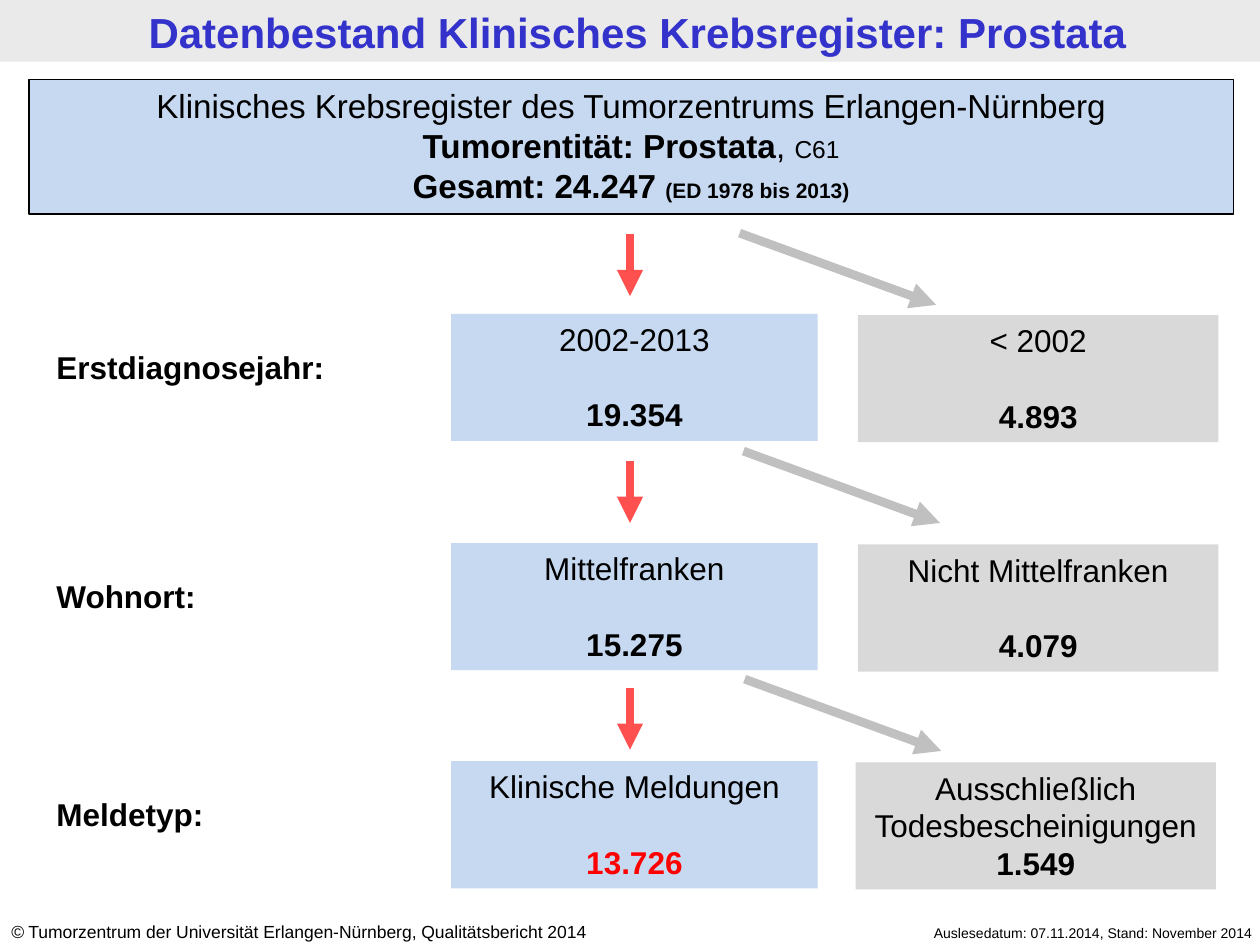
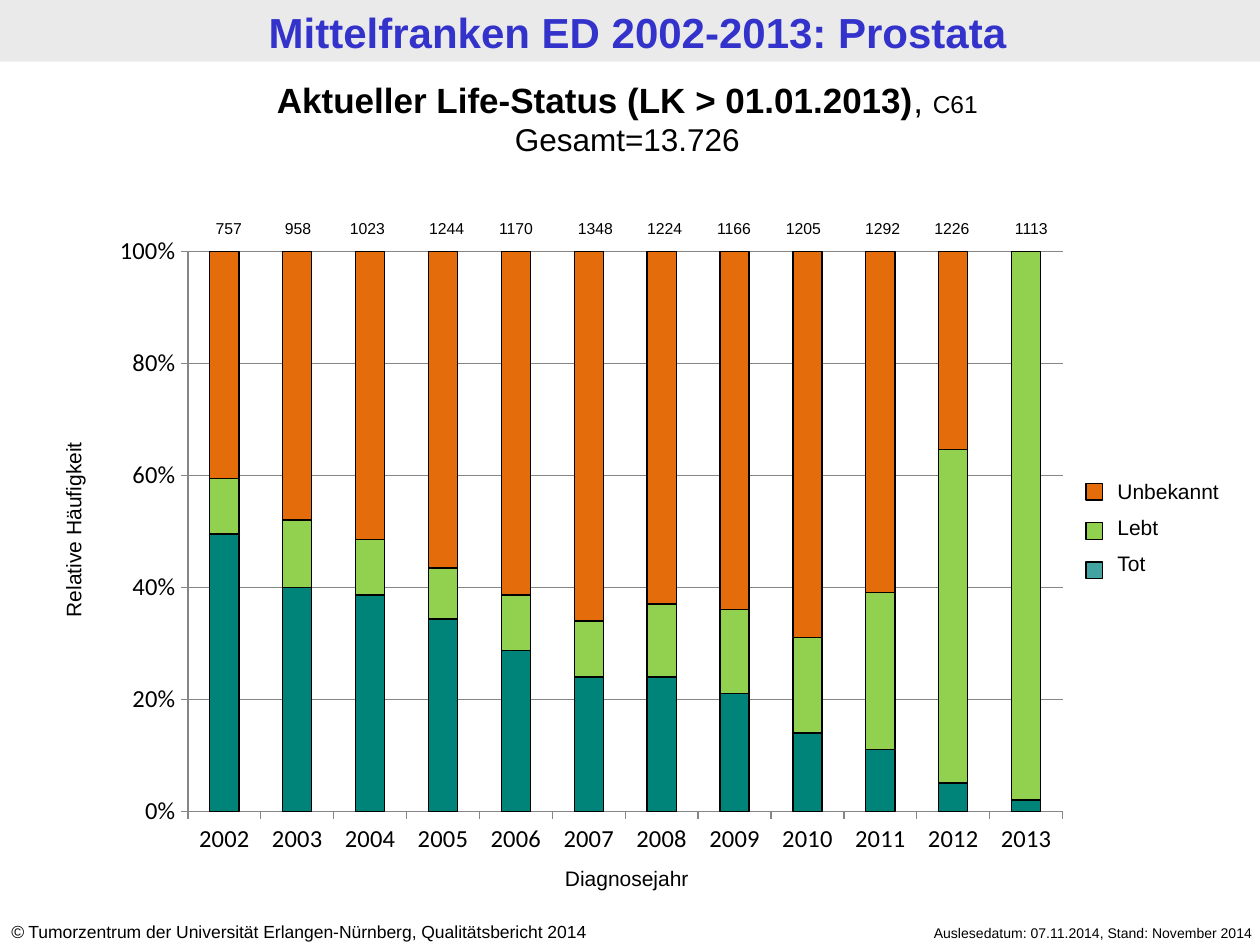
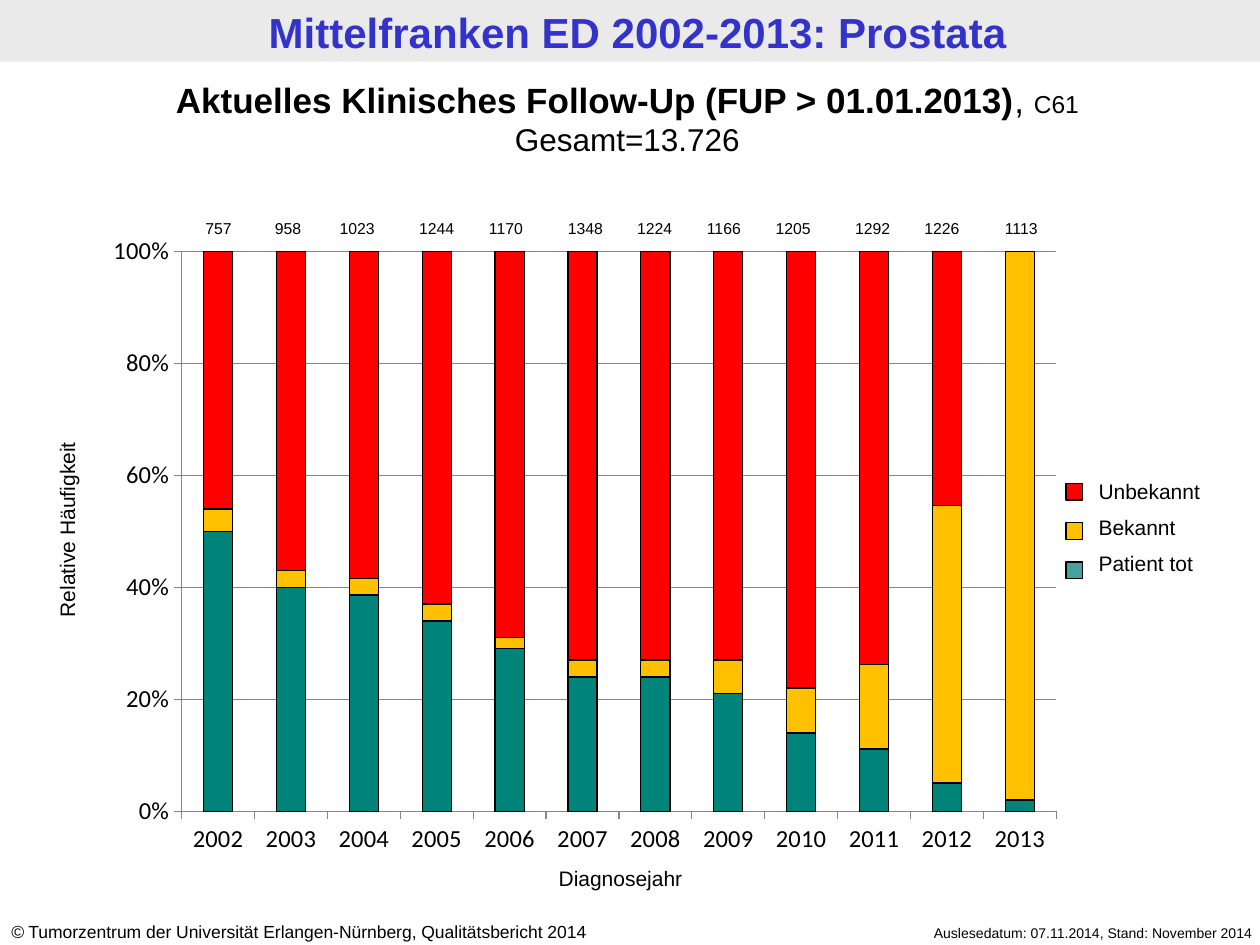
from dataclasses import dataclass

from lxml import etree
from pptx import Presentation
from pptx.chart.data import CategoryChartData
from pptx.dml.color import RGBColor
from pptx.enum.chart import XL_CHART_TYPE, XL_TICK_MARK
from pptx.enum.shapes import MSO_CONNECTOR, MSO_SHAPE
from pptx.enum.text import MSO_ANCHOR, PP_ALIGN
from pptx.oxml import parse_xml
from pptx.oxml.ns import nsdecls, qn
from pptx.util import Inches, Pt

LEFT, MID, RIGHT = PP_ALIGN.LEFT, PP_ALIGN.CENTER, PP_ALIGN.RIGHT
TOP, CENTER = MSO_ANCHOR.TOP, MSO_ANCHOR.MIDDLE
RECT = MSO_SHAPE.RECTANGLE
STRAIGHT = MSO_CONNECTOR.STRAIGHT
STACKED = XL_CHART_TYPE.COLUMN_STACKED_100
OUTSIDE = XL_TICK_MARK.OUTSIDE


@dataclass(frozen=True)
class Theme:
    font: str = "Arial"
    axis_font: str = "Calibri"
    ink: str = "000000"
    title: str = "3333CC"
    band: str = "EAEAEA"
    blue: str = "C6D9F1"
    gray: str = "D9D9D9"
    red: str = "FF0000"
    down: str = "FF5050"
    aside: str = "C0C0C0"
    grid: str = "868686"
    teal: str = "008378"
    key_teal: str = "008380"
    green: str = "92D050"
    orange: str = "E46C0A"
    gold: str = "FFC000"
    title_size: int = 24
    head_size: int = 20
    lead_size: int = 19
    body_size: int = 18
    code_size: int = 14
    label_size: int = 12
    foot_size: int = 10
    count_size: int = 9
    date_size: int = 8


T = Theme()

YEARS = [str(year) for year in range(2002, 2014)]
COUNTS = [757, 958, 1023, 1244, 1170, 1348, 1224, 1166, 1205, 1292, 1226, 1113]
WIDE = (3, 5, 9, 11)  # counts that have a wider gap before them
DEAD = [50, 40, 39, 34, 29, 24, 24, 21, 14, 11, 5, 2]


def rgb(code):
    return RGBColor.from_string(code)


def place(shape, x, y, w, h):
    shape.left, shape.top = Inches(x), Inches(y)
    shape.width, shape.height = Inches(w), Inches(h)


def write(frame, paras, size=T.body_size, color=T.ink, bold=False,
          align=LEFT, anchor=TOP, gap=0, inset=(0.1, 0.05)):
    """Fill a frame; a paragraph is a string or a list of (text, changes)."""
    frame.word_wrap = True
    frame.vertical_anchor = anchor
    frame.margin_left = frame.margin_right = Inches(inset[0])
    frame.margin_top = frame.margin_bottom = Inches(inset[1])
    for i, runs in enumerate(paras):
        para = frame.add_paragraph() if i else frame.paragraphs[0]
        para.alignment = align
        para.space_before = Pt(gap if i else 0)
        for words, diff in [(runs, {})] if isinstance(runs, str) else runs:
            look = {"size": size, "color": color, "bold": bold, **diff}
            run = para.add_run()
            run.text = words
            font = run.font
            font.name = T.font
            font.size = Pt(look["size"])
            font.bold = look["bold"]
            font.italic = look.get("italic", False)
            font.color.rgb = rgb(look["color"])


def label(slide, box, paras, **look):
    shape = slide.shapes.add_textbox(*map(Inches, box))
    write(shape.text_frame, paras, **look)
    return shape


def block(slide, box, fill, edge=False, alpha=None):
    shape = slide.shapes.add_shape(RECT, *map(Inches, box))
    shape.shadow.inherit = False
    shape.fill.solid()
    shape.fill.fore_color.rgb = rgb(fill)
    if alpha:
        color = shape.fill._xPr.find(".//" + qn("a:srgbClr"))
        etree.SubElement(color, qn("a:alpha")).set("val", str(alpha * 1000))
    if edge:
        shape.line.color.rgb = rgb(T.ink)
        shape.line.width = Pt(0.75)
    else:
        shape.line.fill.background()
    return shape


def card(slide, box, fill, name, count, color=T.ink, gap=21.5):
    paras = [name, [(count, {"bold": True, "color": color})]]
    write(block(slide, box, fill).text_frame, paras, align=MID, gap=gap)


def arrow(slide, x, y, dx, dy, color):
    ends = map(Inches, (x, y, x + dx, y + dy))
    link = slide.shapes.add_connector(STRAIGHT, *ends)
    link.line.color.rgb = rgb(color)
    link.line.width = Pt(5)
    line = link.line._get_or_add_ln()
    etree.SubElement(line, qn("a:tailEnd")).set("type", "triangle")
    etree.SubElement(link.element.spPr, qn("a:effectLst"))


def dress(layout, slide):
    """Build the band and footers on a slide, then move them to its layout."""
    title, *rest = layout.placeholders
    for spare in rest:
        spare.element.getparent().remove(spare.element)
    parts = [
        block(slide, (0, 0, 10, 0.49), T.band),
        label(slide, (6.65, 7.29, 3.39, 0.24),
              ["Auslesedatum: 07.11.2014, Stand: November 2014"],
              size=T.date_size, align=RIGHT),
        label(slide, (-0.01, 7.26, 5.24, 0.27),
              [[("©", {"italic": True}),
                (" Tumorzentrum der Universität Erlangen-Nürnberg, "
                 "Qualitätsbericht 2014", {})]], size=T.foot_size),
    ]
    for part in parts:
        title.element.addprevious(part.element)


def head(slide, words):
    title = slide.shapes.title
    place(title, 0.06, 0.01, 10, 0.49)
    write(title.text_frame, [words], size=T.title_size, color=T.title,
          bold=True, align=MID, anchor=CENTER, inset=(0.09, 0.04))


def flow(slide):
    head(slide, "Datenbestand Klinisches Krebsregister: Prostata")
    bold = {"bold": True}
    lead = block(slide, (0.23, 0.63, 9.56, 1.07), T.blue, edge=True)
    write(lead.text_frame, [
        "Klinisches Krebsregister des Tumorzentrums Erlangen-Nürnberg",
        [("Tumorentität: Prostata", bold), (", ", {}),
         ("C61", {"size": T.code_size})],
        [("Gesamt: 24.247 ", bold),
         ("(ED 1978 bis 2013)", {"size": T.label_size, **bold})],
    ], size=T.lead_size, align=MID, inset=(0.11, 0.05))

    steps = [
        ("Erstdiagnosejahr:", 2.49, "2002-2013", "19.354", T.ink,
         6.81, "< 2002", "4.893", 21.5, (5.87, 1.85)),
        ("Wohnort:", 4.31, "Mittelfranken", "15.275", T.ink,
         6.81, "Nicht Mittelfranken", "4.079", 21.5, (5.9, 3.58)),
        ("Meldetyp:", 6.04, "Klinische Meldungen", "13.726", T.red,
         6.79, "Ausschließlich Todesbescheinigungen", "1.549", 0, (5.91, 5.39)),
    ]
    for i, (name, y, kept, count, color, x, out, lost, gap, start) in enumerate(steps):
        label(slide, (0.35, y + 0.22, 2.76, 0.4), [name], bold=True)
        card(slide, (3.58, y, 2.91, 1.01), T.blue, kept, count, color)
        card(slide, (x, y + 0.01, 2.86, 1.01), T.gray, out, lost, gap=gap)
        arrow(slide, 5, 1.86 + 1.8 * i, 0, 0.49, T.down)
        arrow(slide, *start, 1.56, 0.57, T.aside)


def fix_plot(chart, x, y, w, h):
    """Set the inner plot area as shares of the chart's size."""
    sizes = "".join(f'<c:{k} val="{v}"/>' for k, v in zip("xywh", (x, y, w, h)))
    layout = parse_xml(
        f'<c:layout {nsdecls("c")}><c:manualLayout><c:layoutTarget val="inner"/>'
        f'<c:xMode val="edge"/><c:yMode val="edge"/>{sizes}'
        "</c:manualLayout></c:layout>")
    area = chart._chartSpace.chart.plotArea
    for old in area.findall(qn("c:layout")):
        area.remove(old)
    area.insert(0, layout)


def bars(slide, x, series):
    data = CategoryChartData()
    data.categories = YEARS
    for name, vals, _ in series:
        data.add_series(name, vals)
    box = map(Inches, (x, 1.79, 7.8, 5.11))
    chart = slide.shapes.add_chart(STACKED, *box, data).chart
    chart.has_legend = chart.has_title = False
    chart.font.name = T.axis_font
    chart.font.size = Pt(T.body_size)
    chart.font.color.rgb = rgb(T.ink)
    plot = chart.plots[0]
    plot.gap_width, plot.overlap = 150, 100
    plot.vary_by_categories = False
    for item, (_, _, color) in zip(plot.series, series):
        item.format.fill.solid()
        item.format.fill.fore_color.rgb = rgb(color)
        item.format.line.color.rgb = rgb(T.ink)
        item.format.line.width = Pt(0.75)
    scale = chart.value_axis
    for axis in (chart.category_axis, scale):
        axis.major_tick_mark = OUTSIDE
        axis.tick_labels.font.size = Pt(T.code_size)
        axis.format.line.color.rgb = rgb(T.grid)
    scale.minimum_scale, scale.maximum_scale, scale.major_unit = 0, 1, 0.2
    scale.has_major_gridlines = True
    scale.major_gridlines.format.line.color.rgb = rgb(T.grid)
    scale.tick_labels.number_format = "0%"
    scale.tick_labels.number_format_is_linked = False
    fix_plot(chart, 0.09, 0.04, 0.89, 0.87)


def tally(slide, x):
    for i, count in enumerate(COUNTS):
        x += 0.08 if i in WIDE else 0
        label(slide, (x, 1.69, 0.55, 0.25), [str(count)],
              size=T.count_size, align=MID)
        x += 0.55


def legend(slide, x, text_x, series):
    names = [name for name, _, _ in reversed(series)]
    label(slide, (text_x, 3.75, 1.38, 0.91), names, size=T.label_size, gap=6)
    for i, (_, _, color) in enumerate(reversed(series)):
        box = (x, 3.84 + 0.31 * i, 0.13, 0.13)
        if color == T.teal:
            block(slide, box, T.key_teal, edge=True, alpha=74)
        else:
            block(slide, box, color, edge=True)


def status(slide, topic, x, count_x, key_x, name_x, series):
    head(slide, "Mittelfranken ED 2002-2013: Prostata")
    bars(slide, x, series)
    look = {"size": T.label_size, "align": MID, "inset": (0.11, 0.05)}
    side = label(slide, (x - 1.41, 4.05, 2.41, 0.31),
                 ["Relative Häufigkeit"], **look)
    side.rotation = 270
    label(slide, (x + 3.06, 6.82, 2.25, 0.31), ["Diagnosejahr"], **look)
    label(slide, (-0.04, 0.57, 10.04, 0.74), [
        [(topic, {"bold": True}), (", ", {}), ("C61", {"size": T.code_size})],
        [("Gesamt=13.726", {"size": T.body_size})],
    ], size=T.head_size, align=MID)
    tally(slide, count_x)
    legend(slide, key_x, name_x, series)


def main():
    deck = Presentation()
    deck.slide_width, deck.slide_height = Inches(10), Inches(7.5)
    layout = deck.slide_layouts[5]
    first, life, follow = [deck.slides.add_slide(layout) for _ in range(3)]
    dress(layout, first)
    flow(first)
    status(life, "Aktueller Life-Status (LK > 01.01.2013)",
           0.79, 1.54, 8.62, 8.77, [
               ("Tot", DEAD, T.teal),
               ("Lebt", [10, 12, 10, 9, 10, 10, 13, 15, 17, 28, 59, 98], T.green),
               ("Unbekannt", [41, 48, 52, 56, 62, 66, 63, 64, 69, 61, 35, 0],
                T.orange)])
    status(follow, "Aktuelles Klinisches Follow-Up (FUP > 01.01.2013)",
           0.74, 1.46, 8.46, 8.62, [
               ("Patient tot", DEAD, T.teal),
               ("Bekannt", [4, 3, 3, 3, 2, 3, 3, 6, 8, 15, 49, 98], T.gold),
               ("Unbekannt", [46, 57, 59, 63, 69, 73, 73, 73, 78, 73, 45, 0],
                T.red)])
    deck.save("out.pptx")


if __name__ == "__main__":
    main()
